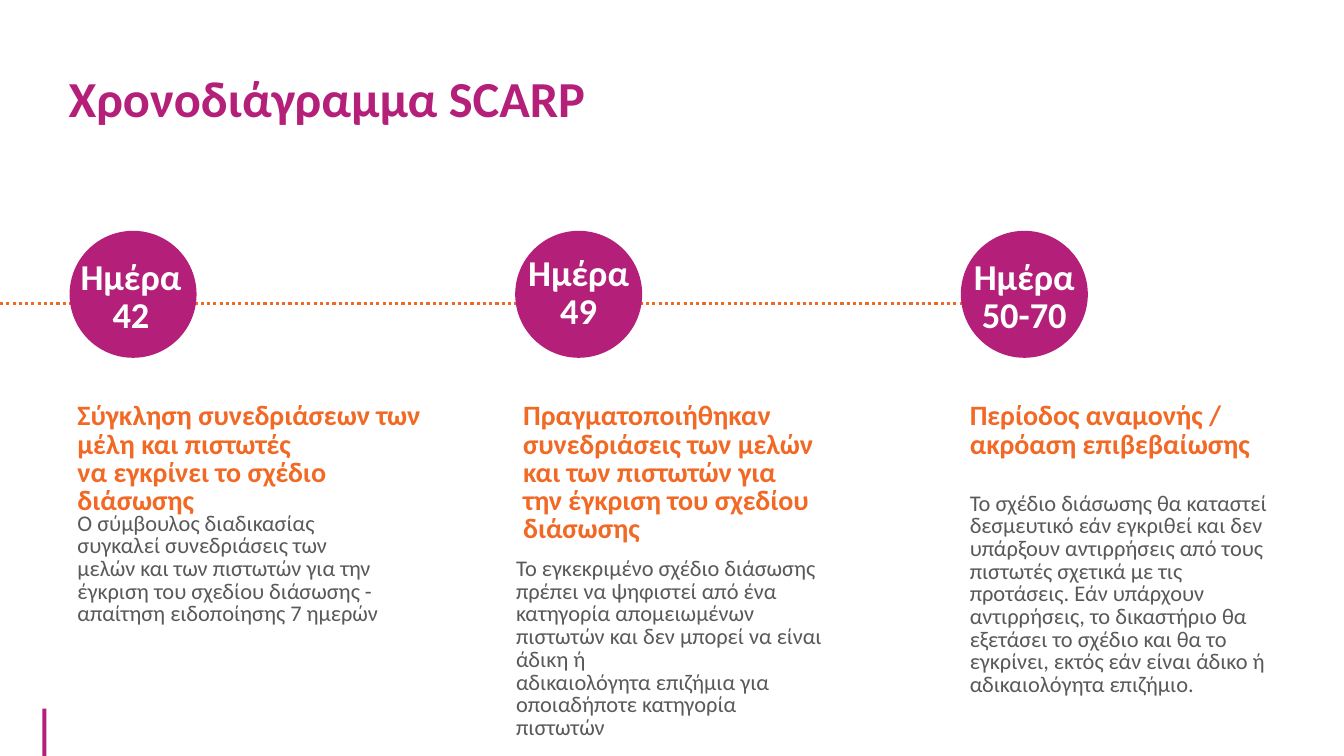
from lxml.etree import SubElement
from pptx import Presentation
from pptx.dml.color import RGBColor
from pptx.enum.dml import MSO_LINE
from pptx.enum.shapes import MSO_CONNECTOR, MSO_SHAPE
from pptx.enum.text import MSO_ANCHOR, MSO_AUTO_SIZE, PP_ALIGN
from pptx.oxml.ns import qn
from pptx.util import Inches, Pt

COLORS = {"magenta": "B41F7A", "orange": "F16924", "grey": "595959", "white": "FFFFFF"}
FONT = "Calibri"
CIRCLE_TOP, CIRCLE_SIZE = 2.29, 1.26
HEADING_TOP = 3.95

# Each text part is (left, top, width, paragraphs).
MILESTONES = [
    {
        "circle_left": 0.69,
        "day": (0.67, 2.53, CIRCLE_SIZE, ["Ημέρα", "42"]),
        "heading": (0.67, HEADING_TOP, 3.83, [
            "Σύγκληση συνεδριάσεων των",
            "μέλη και πιστωτές",
            "να εγκρίνει το σχέδιο διάσωσης",
        ]),
        "details": (0.67, 5.04, 3.29, [
            "Ο σύμβουλος διαδικασίας συγκαλεί συνεδριάσεις των μελών και των "
            "πιστωτών για την έγκριση του σχεδίου διάσωσης - απαίτηση "
            "ειδοποίησης 7 ημερών",
        ]),
    },
    {
        "circle_left": 5.11,
        "day": (5.11, 2.49, CIRCLE_SIZE, ["Ημέρα", "49"]),
        "heading": (5.09, HEADING_TOP, 3.1, [
            "Πραγματοποιήθηκαν συνεδριάσεις των μελών και των πιστωτών για "
            "την έγκριση του σχεδίου διάσωσης",
        ]),
        "details": (5.02, 5.49, 3.29, [
            "Το εγκεκριμένο σχέδιο διάσωσης πρέπει να ψηφιστεί από ένα",
            "κατηγορία απομειωμένων πιστωτών και δεν μπορεί να είναι άδικη ή",
            "αδικαιολόγητα επιζήμια για οποιαδήποτε κατηγορία πιστωτών",
        ]),
    },
    {
        "circle_left": 9.53,
        "day": (9.53, 2.53, CIRCLE_SIZE, ["Ημέρα", "50-70"]),
        "heading": (9.52, HEADING_TOP, 3.8, [
            "Περίοδος αναμονής /",
            "ακρόαση επιβεβαίωσης",
        ]),
        "details": (9.52, 4.84, 3.15, [
            "Το σχέδιο διάσωσης θα καταστεί δεσμευτικό εάν εγκριθεί και δεν "
            "υπάρξουν αντιρρήσεις από τους πιστωτές σχετικά με τις προτάσεις. "
            "Εάν υπάρχουν αντιρρήσεις, το δικαστήριο θα εξετάσει το σχέδιο και "
            "θα το εγκρίνει, εκτός εάν είναι άδικο ή αδικαιολόγητα επιζήμιο.",
        ]),
    },
]

TEXT_FORMATS = {
    "day": {"size": 26, "color": "white", "bold": True,
            "spacing": Pt(27.2), "align": PP_ALIGN.CENTER},
    "heading": {"size": 20, "color": "orange", "bold": True, "spacing": Pt(20.2)},
    "details": {"size": 16, "color": "grey", "spacing": Pt(16.2)},
}


def rgb(name):
    return RGBColor.from_string(COLORS[name])


def write_text(frame, paragraphs, *, size, color, spacing, bold=False,
               align=PP_ALIGN.LEFT, anchor=MSO_ANCHOR.TOP):
    frame.word_wrap = True
    frame.vertical_anchor = anchor
    for index, wording in enumerate(paragraphs):
        paragraph = frame.add_paragraph() if index else frame.paragraphs[0]
        paragraph.text = wording
        paragraph.alignment = align
        paragraph.line_spacing = spacing
        paragraph.space_before = Pt(0)
        font = paragraph.runs[0].font
        font.name, font.size, font.bold = FONT, Pt(size), bold
        font.color.rgb = rgb(color)


def add_filled_shape(shapes, kind, left, top, width, height, color):
    shape = shapes.add_shape(kind, Inches(left), Inches(top), Inches(width), Inches(height))
    shape.shadow.inherit = False
    shape.fill.solid()
    shape.fill.fore_color.rgb = rgb(color)
    shape.line.fill.background()


def add_timeline(shapes):
    timeline = shapes.add_connector(
        MSO_CONNECTOR.STRAIGHT, Inches(0), Inches(3.01), Inches(10.24), Inches(3.01))
    timeline.line.color.rgb = rgb("orange")
    timeline.line.width = Pt(2.25)
    timeline.line.dash_style = MSO_LINE.ROUND_DOT
    SubElement(timeline._element.spPr, qn("a:effectLst"))


def add_milestone(shapes, milestone):
    """Group a day circle with its label, heading and details."""
    group = shapes.add_group_shape().shapes
    add_filled_shape(group, MSO_SHAPE.OVAL, milestone["circle_left"], CIRCLE_TOP,
                     CIRCLE_SIZE, CIRCLE_SIZE, "magenta")
    for part, text_format in TEXT_FORMATS.items():
        left, top, width, paragraphs = milestone[part]
        line_count = {"day": 2, "heading": 3, "details": 5}[part]
        height = Inches(0.1) + line_count * text_format["spacing"]
        box = group.add_textbox(Inches(left), Inches(top), Inches(width), height)
        box.text_frame.auto_size = MSO_AUTO_SIZE.SHAPE_TO_FIT_TEXT
        write_text(box.text_frame, paragraphs, **text_format)


def set_title(title, wording):
    title.left, title.top = Inches(0.58), Inches(0.7)
    title.width, title.height = Inches(8.8), Inches(0.64)
    title.text_frame.auto_size = MSO_AUTO_SIZE.NONE
    write_text(title.text_frame, [wording], size=36, color="magenta", bold=True,
               spacing=0.8, anchor=MSO_ANCHOR.MIDDLE)


def main():
    presentation = Presentation()
    presentation.slide_width, presentation.slide_height = Inches(13.33), Inches(7.5)
    slide = presentation.slides.add_slide(presentation.slide_layouts.get_by_name("Title Only"))
    shapes = slide.shapes
    set_title(shapes.title, "Χρονοδιάγραμμα SCARP")
    add_filled_shape(shapes, MSO_SHAPE.RECTANGLE, 0.42, 7.03, 0.04, 0.47, "magenta")
    add_timeline(shapes)
    for milestone in MILESTONES:
        add_milestone(shapes, milestone)
    presentation.save("out.pptx")


if __name__ == "__main__":
    main()
